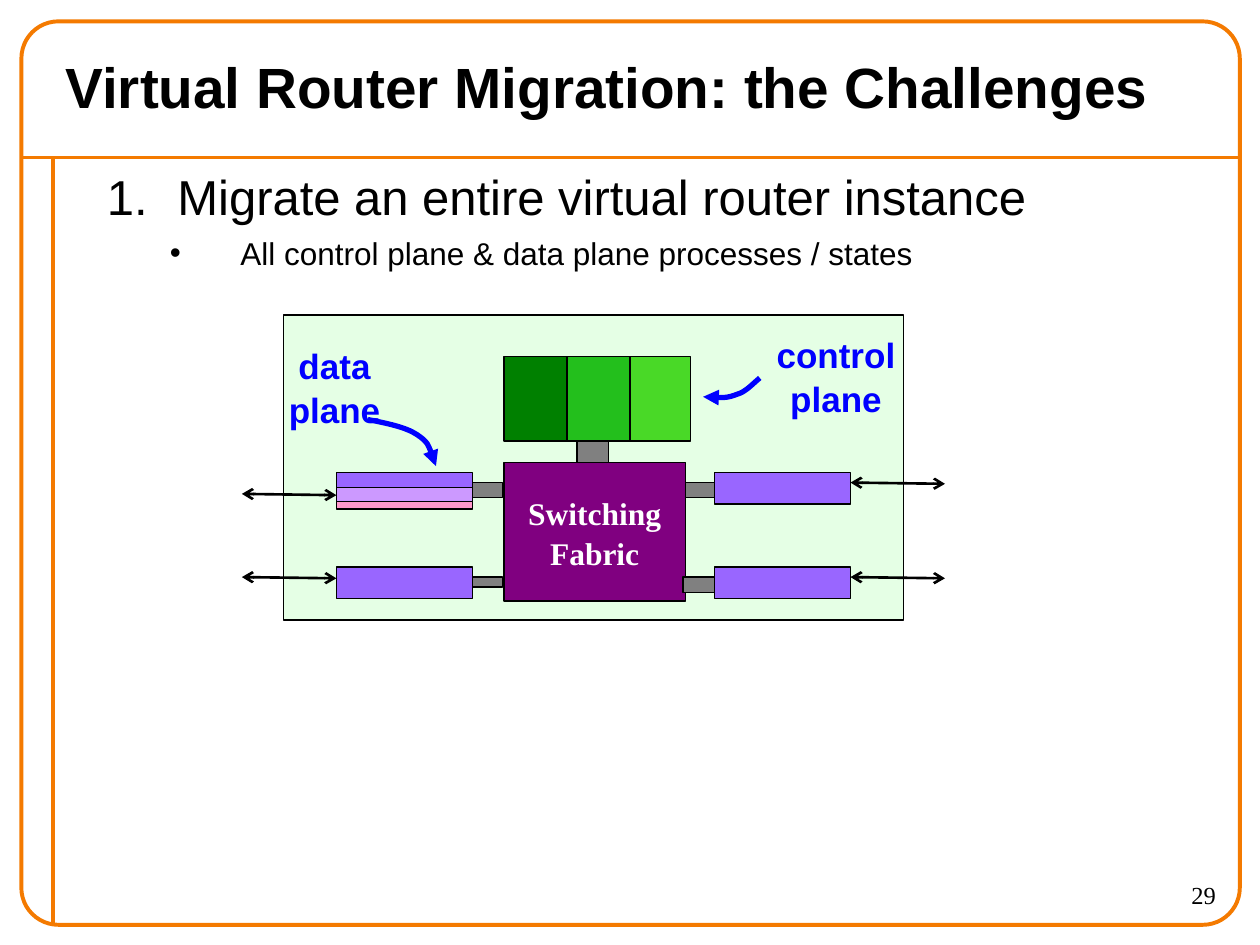
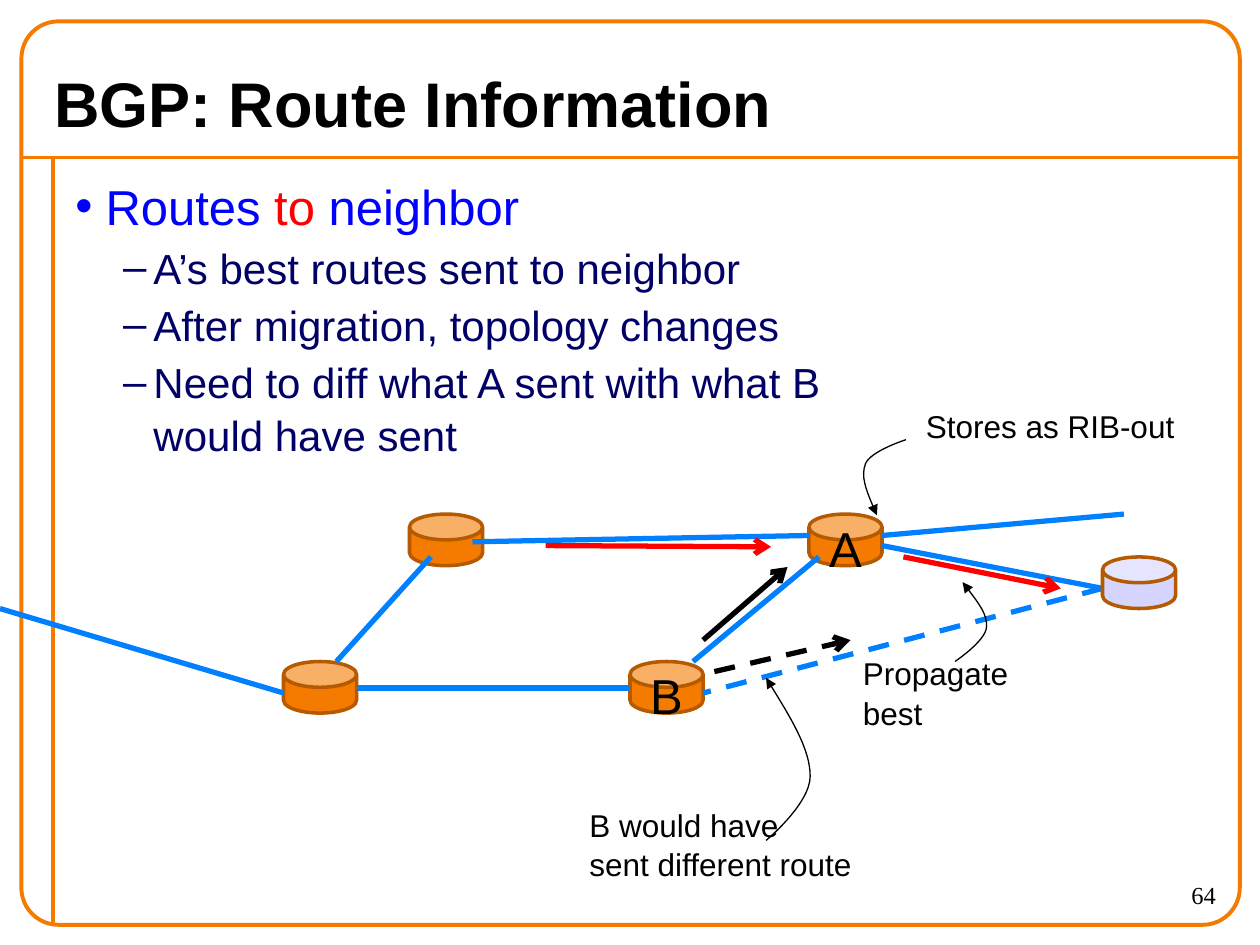
"""Build two slides on virtual router migration and BGP route information."""
from lxml.etree import SubElement
from pptx import Presentation
from pptx.dml.color import RGBColor
from pptx.enum.dml import MSO_LINE
from pptx.enum.shapes import MSO_CONNECTOR, MSO_SHAPE
from pptx.enum.text import MSO_ANCHOR as ANCHOR, MSO_AUTO_SIZE, PP_ALIGN as ALIGN
from pptx.oxml.ns import qn
from pptx.util import Inches, Pt

THEME = {
    "colors": {
        "orange": "F47A00", "rust": "B55A00", "black": "000000", "white": "FFFFFF",
        "blue": "0000FF", "navy": "000066", "red": "FF0000", "link": "0080FF",
        "mint": "CCFFCC", "purple": "800080", "gray": "808080", "violet": "9966FF",
        "lilac": "CC99FF", "pink": "FF99CC", "green": "008000", "mid green": "23BF1C",
        "light green": "49D927", "neighbor": "D5D5FF",
    },
    "text": {
        "long title": ("black", {"name": "Arial", "size": Pt(32.4), "bold": True}),
        "title": ("black", {"name": "Arial", "size": Pt(36), "bold": True}),
        "heading": ("black", {"name": "Arial", "size": Pt(28)}),
        "blue heading": ("blue", {"name": "Arial", "size": Pt(28)}),
        "red heading": ("red", {"name": "Arial", "size": Pt(28)}),
        "detail": ("navy", {"name": "Arial", "size": Pt(24)}),
        "note": ("black", {"name": "Arial", "size": Pt(18)}),
        "plane": ("blue", {"name": "Arial", "size": Pt(20), "bold": True}),
        "fabric": ("white", {"name": "Times New Roman", "size": Pt(18), "bold": True}),
        "number": ("black", {"name": "Times New Roman", "size": Pt(14)}),
    },
}
COLORS = {name: RGBColor.from_string(code) for name, code in THEME["colors"].items()}


def write(shape, *lines, align=ALIGN.LEFT, anchor=ANCHOR.TOP, wrap=True):
    """Fill a shape with lines, each a list of (text, style) runs."""
    frame = shape.text_frame
    layout = {"word_wrap": wrap, "auto_size": MSO_AUTO_SIZE.NONE, "vertical_anchor": anchor}
    for key, value in layout.items():
        setattr(frame, key, value)
    for index, line in enumerate(lines):
        paragraph = frame.add_paragraph() if index else frame.paragraphs[0]
        paragraph.alignment = align
        paragraph.line_spacing = 1.05
        for text, style in line:
            run = paragraph.add_run()
            run.text = text
            color, font_format = THEME["text"][style]
            for key, value in font_format.items():
                setattr(run.font, key, value)
            run.font.color.rgb = COLORS[color]


def outline(shape, color, width, dash=False, head=None, tail=None):
    """Set the line, its ends and an empty effect list."""
    shape.line.color.rgb = COLORS[color]
    shape.line.width = Pt(width)
    if dash:
        shape.line.dash_style = MSO_LINE.DASH
    properties = shape._element.spPr
    for tag, end in (("a:headEnd", head), ("a:tailEnd", tail)):
        if end:
            SubElement(properties.find(qn("a:ln")), qn(tag), type=end)
    SubElement(properties, qn("a:effectLst"))


DOT = ("a:buChar", {"char": "•"})
DASH = ("a:buChar", {"char": "–"})
NUMBER = ("a:buAutoNum", {"type": "arabicPeriod"})
CONTENT = [
    {
        "title": ("Virtual Router Migration: the Challenges", "long title"),
        "title_at": (0.42, 0.33, 9.12, 0.67),
        "number": "29",
        "outline_at": (0.75, 1.25, 9, 4.25),
        "outline": [
            ([("Migrate an entire virtual router instance", "heading")], 0, 0.56, 0.56, 0, NUMBER),
            ([("All control plane & data plane processes / states", "note")], 1, 1.06, 0.56, 3.6, DOT),
        ],
    },
    {
        "title": ("BGP: Route Information", "title"),
        "title_at": (0.33, 0.42, 8.82, 0.75),
        "number": "64",
        "outline_at": (0.5, 1.33, 6.17, 6),
        "outline": [
            ([("Routes ", "blue heading"), ("to", "red heading"), (" neighbor", "blue heading")],
             0, 0.24, 0.24, 0, DOT),
        ] + [
            ([(text, "detail")], 1, 0.62, 0.24, 2.4, DASH)
            for text in ("A’s best routes sent to neighbor",
                         "After migration, topology changes",
                         "Need to diff what A sent with what B would have sent")
        ],
    },
]
CARD_W, CARD_H = 1.08, 0.25
ROUTER_PARTS = [
    ("mint", 2.25, 2.5, 4.92, 2.42),
    ("purple", 4, 3.67, 1.44, 1.1),
    ("gray", 4.58, 3.5, 0.25, 0.17),
    ("gray", 3.75, 3.83, 0.24, 0.12),
    ("gray", 3.75, 4.58, 0.24, 0.08),
    ("gray", 5.44, 3.83, 0.23, 0.12),
    ("gray", 5.42, 4.58, 0.25, 0.12),
    ("violet", 2.67, 4.5, CARD_W, CARD_H),
    ("violet", 5.67, 3.75, CARD_W, CARD_H),
    ("violet", 5.67, 4.5, CARD_W, CARD_H),
    ("green", 4, 2.83, 0.5, 0.67),
    ("mid green", 4.5, 2.83, 0.5, 0.67),
    ("light green", 5, 2.83, 0.48, 0.67),
    ("violet", 2.67, 3.75, CARD_W, 0.12),
    ("lilac", 2.67, 3.87, CARD_W, 0.12),
    ("pink", 2.67, 3.98, CARD_W, 0.06),
]
ROUTERS = [
    ("orange", 2.25, 5.25, ""), ("orange", 3.25, 4.08, ""),
    ("orange", 5, 5.25, "B"), ("orange", 6.42, 4.08, "A"),
    ("neighbor", 8.75, 4.42, ""),
]
PORTS = [(1.92, 3.92), (1.92, 4.58), (6.75, 4.58), (6.75, 3.83)]

deck = Presentation()
deck.slide_width, deck.slide_height = Inches(10), Inches(7.5)

for content in CONTENT:
    slide = deck.slides.add_slide(deck.slide_layouts[5])
    for start, end in (((0.17, 1.25), (9.83, 1.25)), ((0.42, 1.25), (0.42, 7.33))):
        rule = slide.shapes.add_connector(MSO_CONNECTOR.STRAIGHT, *map(Inches, start + end))
        outline(rule, "orange", 2.25)
    border = slide.shapes.add_shape(
        MSO_SHAPE.ROUNDED_RECTANGLE, *map(Inches, (0.17, 0.17, 9.67, 7.17)))
    border.adjustments[0] = 0.041
    border.fill.background()
    outline(border, "orange", 2.25)

    title = slide.shapes.title
    title.left, title.top, title.width, title.height = map(Inches, content["title_at"])
    write(title, [content["title"]], anchor=ANCHOR.MIDDLE)
    page_number = slide.shapes.add_textbox(*map(Inches, (8.75, 6.92, 1, 0.42)))
    write(page_number, [(content["number"], "number")], align=ALIGN.RIGHT)

    body = slide.shapes.add_textbox(*map(Inches, content["outline_at"]))
    write(body, *[item[0] for item in content["outline"]])
    for paragraph, item in zip(body.text_frame.paragraphs, content["outline"]):
        _, level, margin, hanging, space, (bullet, attributes) = item
        properties = paragraph._p.get_or_add_pPr()
        properties.set("marL", str(Inches(margin)))
        properties.set("indent", str(-Inches(hanging)))
        SubElement(properties, qn("a:buFont"), typeface="Arial")
        SubElement(properties, qn(bullet), **attributes)
        paragraph.level = level
        paragraph.space_before = Pt(space)

migration, routes = deck.slides

for color, *place in ROUTER_PARTS:
    part = migration.shapes.add_shape(MSO_SHAPE.RECTANGLE, *map(Inches, place))
    part.fill.solid()
    part.fill.fore_color.rgb = COLORS[color]
    outline(part, "black", 0.75)
    if color == "mint":
        tint = part._element.spPr.find(qn("a:solidFill"))[0]
        SubElement(tint, qn("a:alpha"), val="50000")
    if color == "purple":
        write(part, [("Switching", "fabric")], [("Fabric", "fabric")],
              align=ALIGN.CENTER, anchor=ANCHOR.MIDDLE, wrap=False)

for color, x, y, letter in ROUTERS[:-1]:
    router = routes.shapes.add_shape(MSO_SHAPE.CAN, *map(Inches, (x, y, 0.58, 0.41)))
    router.adjustments[0] = 0.588
    router.fill.solid()
    router.fill.fore_color.rgb = COLORS[color]
    outline(router, "rust", 2)
    if letter:
        write(router, [(letter, "heading")], align=ALIGN.CENTER, anchor=ANCHOR.MIDDLE)

LINK = {"color": "link", "width": 3}
BEST = {"color": "red", "width": 3, "tail": "arrow"}
OTHER = {"color": "black", "width": 3, "tail": "arrow"}
PORT = {"color": "black", "width": 1.5, "head": "arrow", "tail": "arrow"}
LINES = [(migration, (x, y, x + 0.75, y + 0.01), PORT) for x, y in PORTS] + [
    (routes, (6.5, 4.42, 5.5, 5.25), LINK),
    (routes, (6.42, 4.25, 3.75, 4.3), LINK),
    (routes, (3.42, 4.42, 2.67, 5.25), LINK),
    (routes, (2.83, 5.46, 5, 5.46), LINK),
    (routes, (2.25, 5.5, 0, 4.83), LINK),
    (routes, (8.75, 4.67, 7, 4.33), LINK),
    (routes, (8.92, 4.08, 7, 4.25), LINK),
    (routes, (8.75, 4.67, 5.58, 5.5), {**LINK, "dash": True}),
    (routes, (7.17, 4.42, 8.42, 4.67), BEST),
    (routes, (4.33, 4.33, 6.12, 4.34), BEST),
    (routes, (5.58, 5.08, 6.25, 4.5), OTHER),
    (routes, (5.67, 5.33, 6.75, 5.08), {**OTHER, "dash": True}),
]
for slide, ends, line_format in LINES:
    line = slide.shapes.add_connector(MSO_CONNECTOR.STRAIGHT, *map(Inches, ends))
    outline(line, **line_format)

PLANE = {"color": "blue", "width": 3, "tail": "triangle"}
POINTER = {"color": "black", "width": 0.75, "tail": "triangle"}
CURVES = [
    (migration, PLANE, [(2.92, 3.33), (3.07, 3.36), (3.22, 3.39), (3.31, 3.45),
                        (3.4, 3.51), (3.43, 3.6), (3.46, 3.7)]),
    (migration, PLANE, [(6.03, 3), (5.97, 3.05), (5.92, 3.11), (5.85, 3.13),
                        (5.77, 3.16), (5.68, 3.16), (5.58, 3.15)]),
    (routes, POINTER, [(7.19, 3.49), (7.19, 3.49), (6.91, 3.58), (6.87, 3.68),
                       (6.83, 3.78), (6.89, 3.93), (6.96, 4.09)]),
    (routes, POINTER, [(7.58, 5.25), (7.58, 5.25), (7.82, 5.09), (7.83, 4.98),
                       (7.84, 4.88), (7.74, 4.75), (7.64, 4.62)]),
    (routes, POINTER, [(6.08, 6.67), (6.08, 6.67), (6.43, 6.38), (6.43, 6.16),
                       (6.43, 5.95), (6.26, 5.67), (6.08, 5.38)]),
]
for slide, line_format, points in CURVES:
    start, *controls = [(Inches(x), Inches(y)) for x, y in points]
    builder = slide.shapes.build_freeform(*start)
    builder.add_line_segments(controls, close=False)
    curve = builder.convert_to_shape()
    curve.fill.background()
    outline(curve, **line_format)
    track = curve._element.find(".//" + qn("a:path"))
    segments = track.findall(qn("a:lnTo"))
    for first in range(0, len(segments), 3):
        bend = SubElement(track, qn("a:cubicBezTo"))
        for segment in segments[first:first + 3]:
            bend.append(segment[0])
            track.remove(segment)

LABELS = [
    (migration, "plane", (2, 2.67, 1.31, 0.77), ["data plane"]),
    (migration, "plane", (5.83, 2.58, 1.61, 0.77), ["control plane"]),
    (routes, "note", (7.25, 3.17, 2.19, 0.4), ["Stores as RIB-out"]),
    (routes, "note", (6.75, 5.13, 1.44, 0.71), ["Propagate", "best"]),
    (routes, "note", (4.58, 6.33, 2.3, 0.71), ["B would have", "sent different route"]),
]
for slide, style, place, lines in LABELS:
    label = slide.shapes.add_textbox(*map(Inches, place))
    centered = style == "plane"
    write(label, *[[(text, style)] for text in lines],
          align=ALIGN.CENTER if centered else ALIGN.LEFT, wrap=centered)

color, x, y, _ = ROUTERS[-1]
neighbor = routes.shapes.add_shape(MSO_SHAPE.CAN, *map(Inches, (x, y, 0.58, 0.41)))
neighbor.adjustments[0] = 0.588
neighbor.fill.solid()
neighbor.fill.fore_color.rgb = COLORS[color]
outline(neighbor, "rust", 2)

deck.save("out.pptx")
